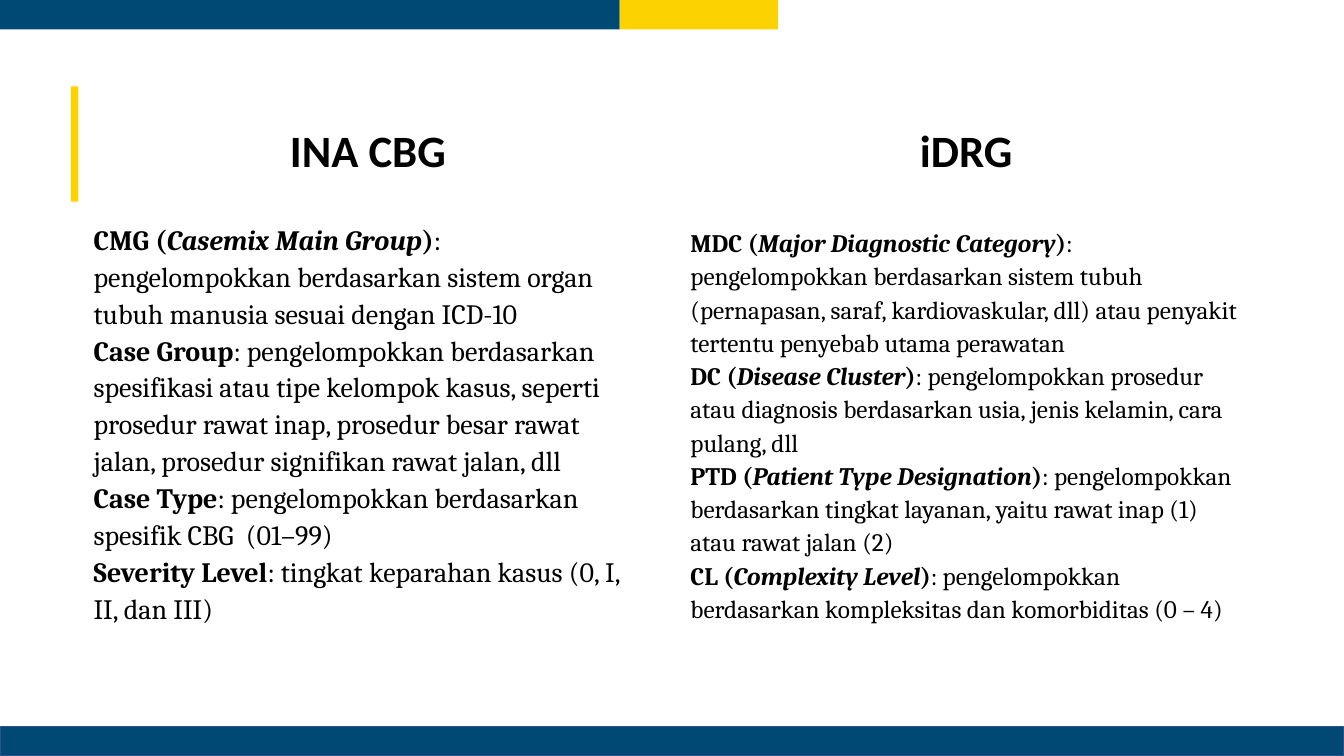
import pptx
import pptx.util
import pptx.dml.color
import pptx.enum.shapes
import pptx.enum.text

Cm = pptx.util.Cm
Pt = pptx.util.Pt
COLORS = {"blue": "004974", "yellow": "FCD200", "edge": "2E528F", "text": "000000"}
SLIDE_W, SLIDE_H = 33.87, 19.05
BAND_H = 0.74
HEADING_H = 2.24

INA_CBG = [
    ("CMG", "Casemix Main Group",
     ": pengelompokkan berdasarkan sistem organ tubuh manusia sesuai dengan ICD-10"),
    ("Case Group", "",
     ": pengelompokkan berdasarkan spesifikasi atau tipe kelompok kasus, seperti "
     "prosedur rawat inap, prosedur besar rawat jalan, prosedur signifikan rawat jalan, dll"),
    ("Case Type", "", ": pengelompokkan berdasarkan spesifik CBG  (01–99)"),
    ("Severity Level", "", ": tingkat keparahan kasus (0, I, II, dan III)"),
]
IDRG = [
    ("MDC", "Major Diagnostic Category",
     ": pengelompokkan berdasarkan sistem tubuh (pernapasan, saraf, kardiovaskular, dll) "
     "atau penyakit tertentu penyebab utama perawatan"),
    ("DC", "Disease Cluster",
     ": pengelompokkan prosedur atau diagnosis berdasarkan usia, jenis kelamin, cara pulang, dll"),
    ("PTD", "Patient Type Designation",
     ": pengelompokkan berdasarkan tingkat layanan, yaitu rawat inap (1) atau rawat jalan (2)"),
    ("CL", "Complexity Level",
     ": pengelompokkan berdasarkan kompleksitas dan komorbiditas (0 – 4)"),
]


def rgb(name):
    return pptx.dml.color.RGBColor.from_string(COLORS[name])


def add_bar(s, left, top, width, height, color, edge=None):
    sp = s.shapes.add_shape(pptx.enum.shapes.MSO_SHAPE.RECTANGLE,
                            Cm(left), Cm(top), Cm(width), Cm(height))
    sp.shadow.inherit = False
    sp.fill.solid()
    sp.fill.fore_color.rgb = rgb(color)
    if edge:
        sp.line.color.rgb = rgb(edge)
        sp.line.width = Pt(0.96)
    else:
        sp.line.fill.background()


def add_text_box(s, left, top, width, height):
    tf = s.shapes.add_textbox(Cm(left), Cm(top), Cm(width), Cm(height)).text_frame
    tf.word_wrap = True
    tf.vertical_anchor = pptx.enum.text.MSO_ANCHOR.MIDDLE
    return tf


def style_run(r, font, size, bold=False, italic=False):
    r.font.name = font
    r.font.size = Pt(size)
    r.font.bold = bold
    r.font.italic = italic
    r.font.color.rgb = rgb("text")


def add_header(s, left, top, width, height):
    blue_w = 15.62
    add_bar(s, left, top, blue_w, height, "blue")
    add_bar(s, left + blue_w, top, width - blue_w, height, "yellow")


def add_footer(s, left, top, width, height):
    add_bar(s, left, top, width, height, "blue", "edge")


def add_column(s, left, top, width, height, heading, terms, size, gap):
    tf = add_text_box(s, left, top, width, HEADING_H)
    tf.text = heading
    p = tf.paragraphs[0]
    p.alignment = pptx.enum.text.PP_ALIGN.CENTER
    style_run(p.runs[0], "Calibri", 32, bold=True)

    body_top = top + HEADING_H + gap
    tf = add_text_box(s, left, body_top, width, height - HEADING_H)
    for i, (term, expansion, meaning) in enumerate(terms):
        p = tf.paragraphs[0] if i == 0 else tf.add_paragraph()
        p.line_spacing = 1.1
        parts = [(term, True, False), (meaning, False, False)]
        if expansion:
            parts[:1] = [(term + " (", True, False), (expansion, True, True), (")", True, False)]
        for text, bold, italic in parts:
            r = p.add_run()
            r.text = text
            style_run(r, "Cambria", size, bold, italic)


def main():
    prs = pptx.Presentation()
    prs.slide_width = Cm(SLIDE_W)
    prs.slide_height = Cm(SLIDE_H)
    s = prs.slides.add_slide(prs.slide_layouts[6])
    add_footer(s, 0, SLIDE_H - BAND_H, SLIDE_W, BAND_H)
    add_bar(s, 1.79, 2.18, 0.19, 2.9, "yellow")
    add_header(s, 0, 0, 19.61, BAND_H)
    add_column(s, 2.11, 2.64, 14.33, 13.75, "INA CBG", INA_CBG, 20, 0)
    add_column(s, 17.15, 2.64, 14.4, 13.75, "iDRG", IDRG, 18, 0.05)
    prs.save("out.pptx")


if __name__ == "__main__":
    main()
